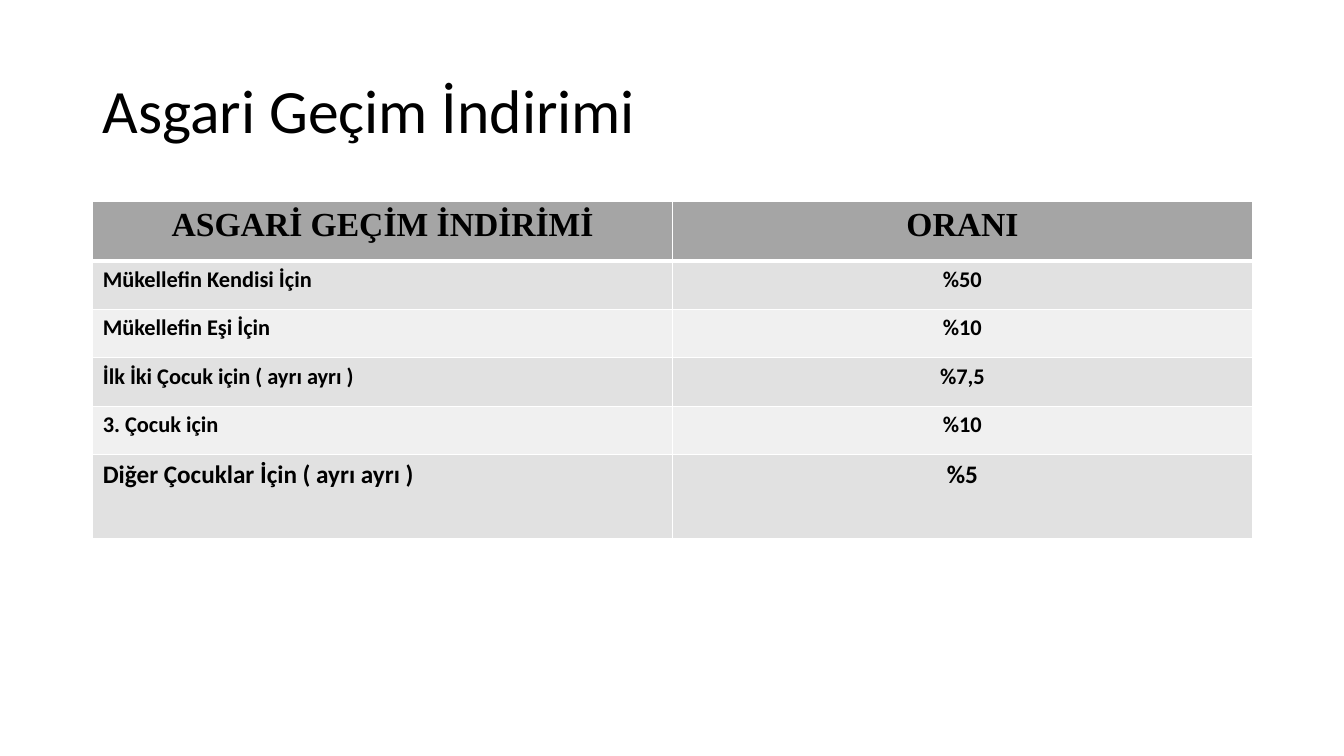
"""Build the slide with the table of minimum living allowance rates."""
from dataclasses import dataclass

import lxml.etree
import pptx
import pptx.dml.color
import pptx.enum.text
import pptx.oxml.ns
import pptx.slide
import pptx.table
import pptx.text.text
import pptx.util

Inches = pptx.util.Inches
ALIGN = pptx.enum.text.PP_ALIGN
ANCHOR = pptx.enum.text.MSO_ANCHOR
LEFT, WIDTH = 0.92, 11.5
TITLE_FORMAT = {"name": "Calibri", "size": pptx.util.Pt(44), "bold": False}
HEADER_FORMAT = {"name": "Times New Roman", "size": pptx.util.Pt(24), "bold": True}
BODY_FORMAT = {"name": "Calibri", "size": pptx.util.Pt(16), "bold": True}
LAST_FORMAT = {**BODY_FORMAT, "size": pptx.util.Pt(18)}


@dataclass(frozen=True)
class RateRow:
    label: str
    rate: str
    height: float = 0.48
    fill: str = "E1E1E1"
    font: dict[str, object] | None = None
    label_align: ALIGN = ALIGN.LEFT
    top_border: float = 1
    bottom_border: float = 1


RATE_ROWS = [
    RateRow("ASGARİ GEÇİM İNDİRİMİ", "ORANI", 0.59, "A5A5A5", HEADER_FORMAT, ALIGN.CENTER, bottom_border=3),
    RateRow("Mükellefin Kendisi İçin", "%50", top_border=3),
    RateRow("Mükellefin Eşi İçin", "%10", fill="F0F0F0"),
    RateRow("İlk İki Çocuk için ( ayrı ayrı )", "%7,5"),
    RateRow("3. Çocuk için", "%10", fill="F0F0F0"),
    RateRow("Diğer Çocuklar İçin ( ayrı ayrı )", "%5", 0.83, font=LAST_FORMAT),
]


def color(value: str) -> pptx.dml.color.RGBColor:
    return pptx.dml.color.RGBColor.from_string(value)


def write(paragraph: pptx.text.text._Paragraph, text: str, font: dict[str, object], align: ALIGN) -> None:
    paragraph.alignment = align
    run = paragraph.add_run()
    run.text = text
    for name, value in font.items():
        setattr(run.font, name, value)
    run.font.color.rgb = color("000000")


def add_borders(cell: pptx.table._Cell, widths: dict[str, float]) -> None:
    properties = cell._tc.get_or_add_tcPr()
    qualified = pptx.oxml.ns.qn
    for side, width in widths.items():
        line = lxml.etree.SubElement(properties, qualified(f"a:ln{side}"), w=str(pptx.util.Pt(width)))
        fill = lxml.etree.SubElement(line, qualified("a:solidFill"))
        lxml.etree.SubElement(fill, qualified("a:srgbClr"), val="FFFFFF")


def add_title(slide: pptx.slide.Slide, text: str) -> None:
    shape = slide.shapes.add_textbox(Inches(LEFT), Inches(0.4), Inches(WIDTH), Inches(1.45))
    frame = shape.text_frame
    frame.word_wrap = True
    frame.vertical_anchor = ANCHOR.MIDDLE
    frame.paragraphs[0].line_spacing = 0.9
    write(frame.paragraphs[0], text, TITLE_FORMAT, ALIGN.LEFT)


def add_rate_table(slide: pptx.slide.Slide, rows: list[RateRow]) -> None:
    height = sum(row.height for row in rows)
    shape = slide.shapes.add_table(len(rows), 2, Inches(LEFT), Inches(2), Inches(WIDTH), Inches(height))
    table = shape.table
    for column in table.columns:
        column.width = Inches(WIDTH / 2)
    for index, row in enumerate(rows):
        table.rows[index].height = Inches(row.height)
        contents = [(row.label, row.label_align), (row.rate, ALIGN.CENTER)]
        for cell, (text, align) in zip(table.rows[index].cells, contents):
            add_borders(cell, {"L": 1, "R": 1, "T": row.top_border, "B": row.bottom_border})
            cell.fill.solid()
            cell.fill.fore_color.rgb = color(row.fill)
            write(cell.text_frame.paragraphs[0], text, row.font or BODY_FORMAT, align)


def main() -> None:
    presentation = pptx.Presentation()
    presentation.slide_width = Inches(13.33)
    presentation.slide_height = Inches(7.5)
    slide = presentation.slides.add_slide(presentation.slide_layouts[6])
    add_title(slide, "Asgari Geçim İndirimi")
    add_rate_table(slide, RATE_ROWS)
    presentation.save("out.pptx")


if __name__ == "__main__":
    main()
